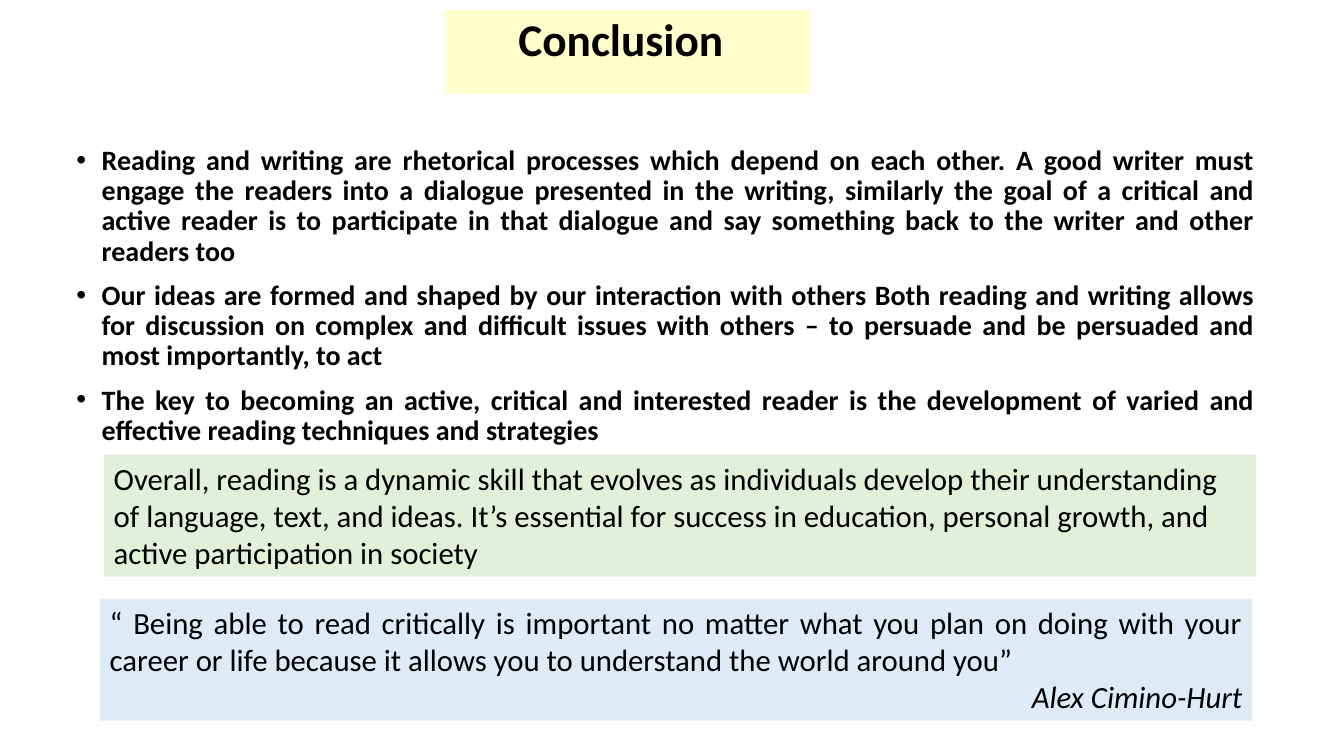
from lxml import etree
from pptx import Presentation
from pptx import util as u
from pptx.dml.color import RGBColor
from pptx.enum import shapes, text
from pptx.oxml.ns import qn

BLACK = RGBColor(0, 0, 0)
YELLOW = RGBColor(0xFF, 0xFF, 0xCC)
GREEN = RGBColor(0xE2, 0xF0, 0xD9)
BLUE = RGBColor(0xDE, 0xEB, 0xF7)
ALIGN = text.PP_ALIGN

POINTS = [
    "Reading and writing are rhetorical processes which depend on each other. "
    "A good writer must engage the readers into a dialogue presented in the "
    "writing, similarly the goal of a critical and active reader is to "
    "participate in that dialogue and say something back to the writer and "
    "other readers too",
    "Our ideas are formed and shaped by our interaction with others Both reading "
    "and writing allows for discussion on complex and difficult issues with "
    "others – to persuade and be persuaded and most importantly, to act",
    "The key to becoming an active, critical and interested reader is the "
    "development of varied and effective reading techniques and strategies",
]
SUMMARY = (
    "Overall, reading is a dynamic skill that evolves as individuals develop "
    "their understanding of language, text, and ideas. It’s essential for "
    "success in education, personal growth, and active participation in society"
)
QUOTE = (
    "“ Being able to read critically is important no matter what you plan on "
    "doing with your career or life because it allows you to understand the "
    "world around you”"
)


class SlideBuilder:
    """Holds the text style and the slide being filled."""

    font = "Calibri"
    color = BLACK

    def __init__(self, slide):
        self.slide = slide

    def panel(self, left, top, width, height, fill):
        """Add a filled rectangle without outline and return its text frame."""
        box = self.slide.shapes.add_shape(
            shapes.MSO_SHAPE.RECTANGLE,
            u.Inches(left), u.Inches(top), u.Inches(width), u.Inches(height))
        box.shadow.inherit = False
        box.fill.solid()
        box.fill.fore_color.rgb = fill
        box.line.fill.background()
        return self.prepare(box.text_frame)

    def text_box(self, left, top, width, height):
        box = self.slide.shapes.add_textbox(
            u.Inches(left), u.Inches(top), u.Inches(width), u.Inches(height))
        return self.prepare(box.text_frame)

    def prepare(self, frame):
        frame.word_wrap = True
        frame.vertical_anchor = text.MSO_ANCHOR.TOP
        return frame

    def paragraph(self, frame, words, size, align, bold=False, italic=False):
        """Fill the first empty paragraph, or append a new one."""
        first = frame.paragraphs[0]
        para = frame.add_paragraph() if first.runs else first
        para.alignment = align
        span = para.add_run()
        span.text = words
        span.font.name = self.font
        span.font.size = u.Pt(size)
        span.font.color.rgb = self.color
        span.font.bold = bold
        span.font.italic = italic
        return para

    def bullet(self, frame, words, size):
        para = self.paragraph(frame, words, size, ALIGN.JUSTIFY, bold=True)
        para.line_spacing = 0.9
        para.space_before = u.Pt(10)
        props = para._p.get_or_add_pPr()
        props.set("marL", str(u.Inches(0.25)))
        props.set("indent", str(u.Inches(-0.25)))
        etree.SubElement(props, qn("a:buFont")).set("typeface", "Arial")
        etree.SubElement(props, qn("a:buChar")).set("char", "•")


def main():
    deck = Presentation()
    deck.slide_width, deck.slide_height = u.Inches(13.33), u.Inches(7.5)
    page = SlideBuilder(deck.slides.add_slide(deck.slide_layouts[6]))

    # Title
    title = page.panel(4.41, 0.1, 3.62, 0.83, YELLOW)
    title.margin_top = u.Inches(0.01)
    title.margin_right = u.Inches(0.22)
    page.paragraph(title, "Conclusion", 32.4, ALIGN.CENTER, bold=True)

    # Main points
    body = page.text_box(0.66, 0.93, 11.88, 6.22)
    body.margin_top = u.Inches(0.52)
    for point in POINTS:
        page.bullet(body, point, 20)

    # Quotation with its author
    quote = page.panel(0.99, 5.94, 11.43, 1.21, BLUE)
    page.paragraph(quote, QUOTE, 22, ALIGN.JUSTIFY)
    page.paragraph(quote, "Alex Cimino-Hurt", 22, ALIGN.RIGHT, italic=True)

    # Summary
    summary = page.panel(1.03, 4.51, 11.43, 1.21, GREEN)
    page.paragraph(summary, SUMMARY, 22, ALIGN.LEFT)

    deck.save("out.pptx")


if __name__ == "__main__":
    main()
